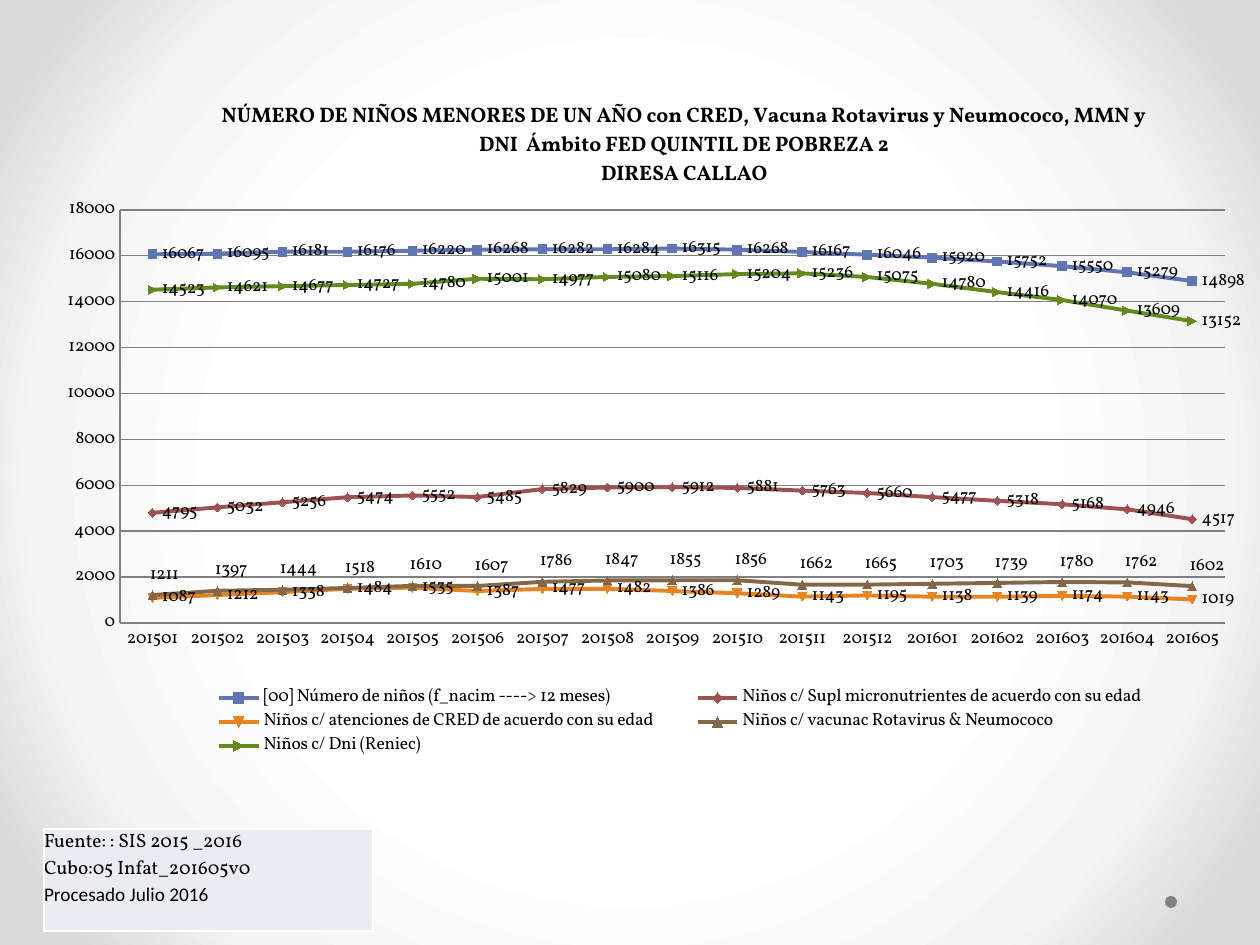
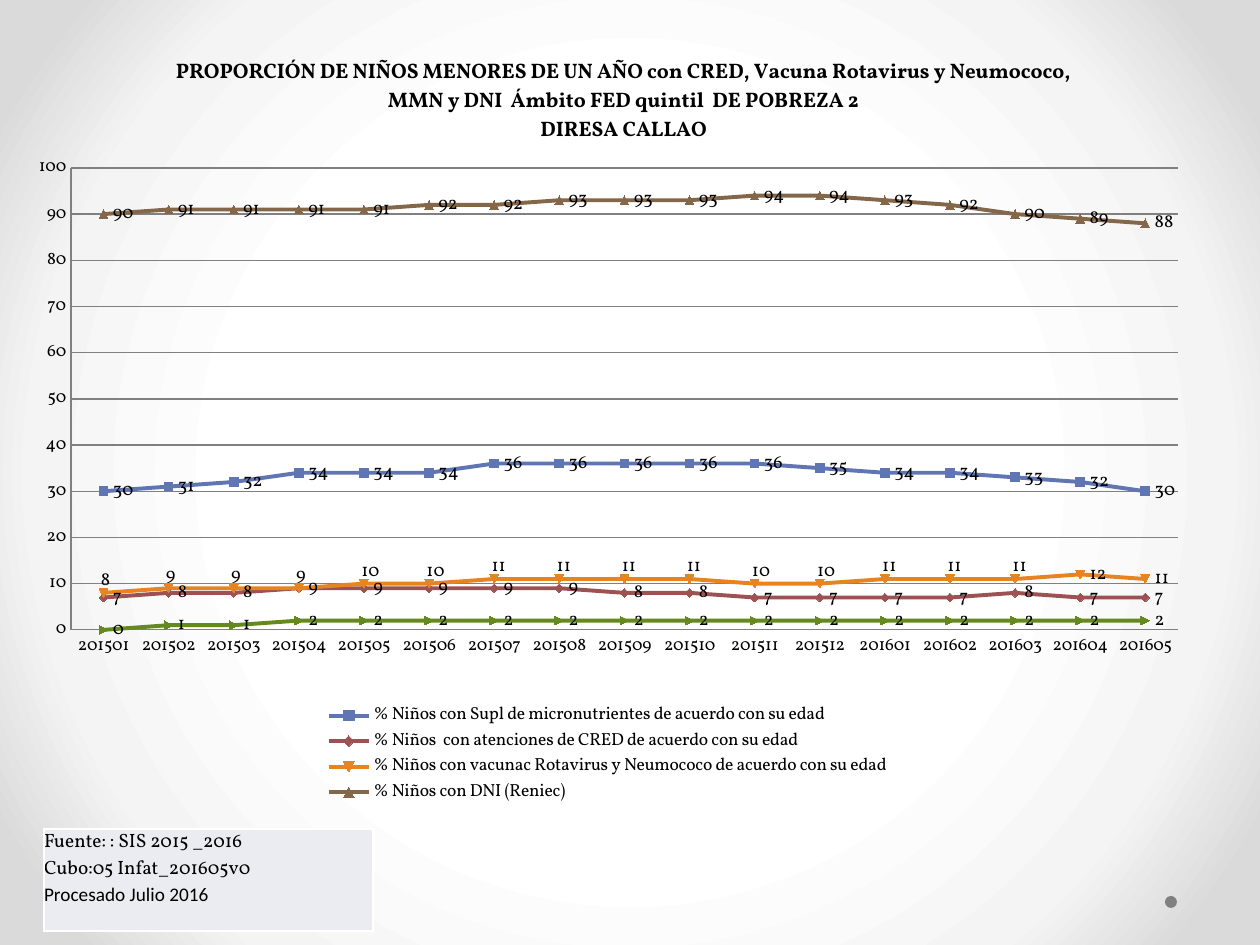
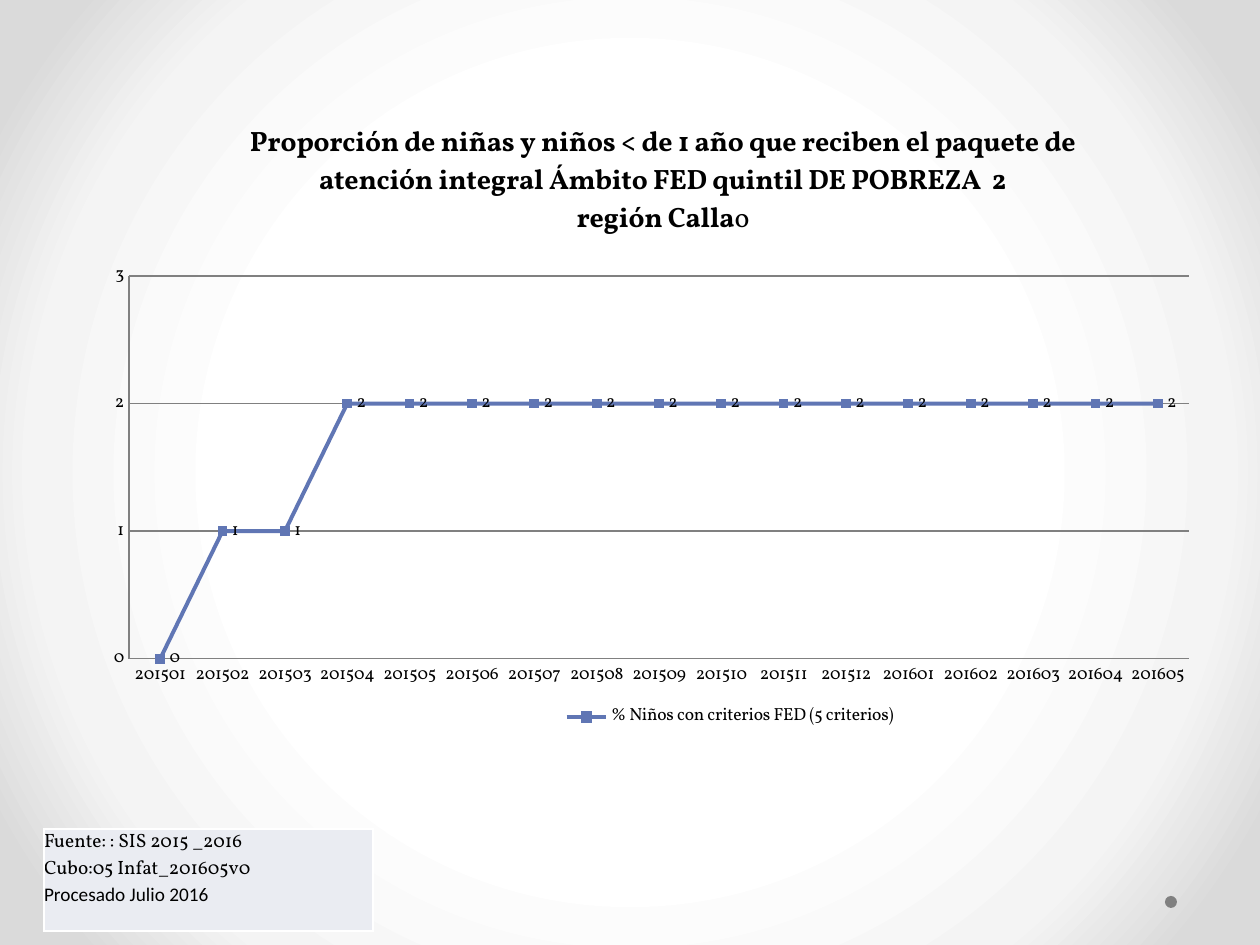
from itertools import product

from pptx import Presentation
from pptx.chart.data import CategoryChartData
from pptx.dml.color import RGBColor
from pptx.enum.chart import XL_CHART_TYPE, XL_LABEL_POSITION, XL_LEGEND_POSITION, XL_TICK_MARK
from pptx.enum.shapes import MSO_SHAPE
from pptx.enum.text import MSO_ANCHOR
from pptx.oxml import parse_xml
from pptx.oxml.ns import nsdecls, qn
from pptx.util import Emu, Pt

PX = 914400 / 126
FONT = "Vollkorn"
COLORS = {
    "text": "000000", "grid": "808080", "dot": "808080",
    "source": "EAECF2", "border": "FFFFFF",
    "blue": "6076B4", "red": "9C5252", "orange": "E68422",
    "brown": "846648", "green": "63891F",
}
SERIES_COLORS = ["blue", "red", "orange", "brown", "green"]
BACKGROUND_STOPS = [(50, "FFFFFF"), (76, "F4F4F4"), (92, "DADADA")]
SOURCE_LINES = [
    ("Fuente: : SIS 2015 _2016", FONT),
    ("Cubo:05 Infat_201605v0", FONT),
    ("Procesado Julio 2016", "Calibri"),
]
SOURCE_BOX = (44, 829, 329, 102)
DOT_BOX = (1165, 896, 12, 12)

MONTHS = [f"{year}{month:02}" for year, month in product((2015, 2016), range(1, 13))][:17]
CHILDREN = [16067, 16095, 16181, 16176, 16220, 16268, 16282, 16284, 16315,
            16268, 16167, 16046, 15920, 15752, 15550, 15279, 14898]
MICRONUTRIENTS = [4795, 5032, 5256, 5474, 5552, 5485, 5829, 5900, 5912,
                  5881, 5763, 5660, 5477, 5318, 5168, 4946, 4517]
CRED = [1087, 1212, 1338, 1484, 1535, 1387, 1477, 1482, 1386,
        1289, 1143, 1195, 1138, 1139, 1174, 1143, 1019]
VACCINES = [1211, 1397, 1444, 1518, 1610, 1607, 1786, 1847, 1855,
            1856, 1662, 1665, 1703, 1739, 1780, 1762, 1602]
DNI = [14523, 14621, 14677, 14727, 14780, 15001, 14977, 15080, 15116,
       15204, 15236, 15075, 14780, 14416, 14070, 13609, 13152]
FED_CRITERIA = ("% Niños con criterios FED (5 criterios)", [0, 1, 1] + [2] * 14)


def percent(counts):
    """Share of all children, month by month."""
    return [round(100 * count / total) for count, total in zip(counts, CHILDREN)]


# Boxes are left, top, width, height on the slide. "raised" names the series
# whose first labels move right and down: series, number of labels, shift.
SLIDES = [
    {
        "box": (64, 76, 1181, 684), "plot": (120, 210, 1105, 413),
        "legend": (180, 686, 1000, 72), "hidden_entries": [],
        "title_at": (218, 97), "title_size": 12, "label_size": 10,
        "title": [
            [("NÚMERO DE NIÑOS MENORES DE UN AÑO con CRED, Vacuna Rotavirus y Neumococo, "
              "MMN y DNI  Ámbito FED QUINTIL DE POBREZA 2", True)],
            [("DIRESA CALLAO", True)],
        ],
        "top_value": 18000, "step": 2000,
        "series": [
            ("[00] Número de niños (f_nacim ----> 12 meses)", CHILDREN),
            ("Niños c/ Supl micronutrientes de acuerdo con su edad", MICRONUTRIENTS),
            ("Niños c/ atenciones de CRED de acuerdo con su edad", CRED),
            ("Niños c/ vacunac Rotavirus & Neumococo", VACCINES),
            ("Niños c/ Dni (Reniec)", DNI),
        ],
        "raised": (3, 17, (-12, -20)),
    },
    {
        "box": (25, 26, 1191, 794), "plot": (71, 168, 1107, 462),
        "legend": (320, 702, 575, 104), "hidden_entries": [4],
        "title_at": (172, 53), "title_size": 12, "label_size": 10.5,
        "title": [
            [("PROPORCIÓN DE NIÑOS MENORES DE UN AÑO con CRED, Vacuna Rotavirus y Neumococo, "
              "MMN y DNI  Ámbito FED quintil  DE POBREZA 2", True)],
            [("DIRESA CALLAO", True)],
        ],
        "top_value": 100, "step": 10,
        "series": [
            ("% Niños con Supl de micronutrientes de acuerdo con su edad", percent(MICRONUTRIENTS)),
            ("% Niños  con atenciones de CRED de acuerdo con su edad", percent(CRED)),
            ("% Niños con vacunac Rotavirus y Neumococo de acuerdo con su edad", percent(VACCINES)),
            ("% Niños con DNI (Reniec)", percent(DNI)),
            FED_CRITERIA,
        ],
        "raised": (2, 15, (-12, -12)),
    },
    {
        "box": (89, 116, 1106, 643), "plot": (129, 276, 1060, 383),
        "legend": (560, 703, 340, 28), "hidden_entries": [],
        "title_at": (246, 119), "title_size": 16, "label_size": 10,
        "title": [
            [("Proporción de niñas y niños < de 1 año que reciben el paquete de "
              "atención integral Ámbito FED quintil DE POBREZA  2", True)],
            [("región Calla", True), ("o", False)],
        ],
        "top_value": 3, "step": 1,
        "series": [FED_CRITERIA],
        "raised": None,
    },
]


def emu(box):
    return [Emu(round(length * PX)) for length in box]


def rgb(name):
    return RGBColor.from_string(COLORS[name])


def style_font(font, size, name=FONT, bold=False):
    font.size, font.name, font.bold = Pt(size), name, bold
    font.color.rgb = rgb("text")


def style_line(line, color, width):
    line.color.rgb = rgb(color)
    line.width = Pt(width)


def set_layout(parent, index, settings):
    """Give a chart part a manual layout, as its child number index."""
    for old in parent.findall(qn("c:layout")):
        parent.remove(old)
    children = "".join(f'<c:{tag} val="{value}"/>' for tag, value in settings)
    parent.insert(index, parse_xml(
        f'<c:layout {nsdecls("c")}><c:manualLayout>{children}</c:manualLayout></c:layout>'))


def edge_layout(box, chart_box):
    """Settings that put a slide box (or just its corner) inside the chart."""
    left, top, width, height = chart_box
    origin = (left, top, 0, 0)
    extent = (width, height, width, height)
    fractions = [(tag, round((length - start) / whole, 4))
                 for tag, length, start, whole in zip("xywh", box, origin, extent)]
    return [("xMode", "edge"), ("yMode", "edge")] + fractions


def set_background(master):
    stops = "".join(f'<a:gs pos="{at * 1000}"><a:srgbClr val="{color}"/></a:gs>'
                    for at, color in BACKGROUND_STOPS)
    common = master.element.cSld
    for old in common.findall(qn("p:bg")):
        common.remove(old)
    common.insert(0, parse_xml(
        f'<p:bg {nsdecls("p", "a")}><p:bgPr><a:gradFill rotWithShape="1">'
        f'<a:gsLst>{stops}</a:gsLst><a:path path="circle">'
        '<a:fillToRect l="50000" t="50000" r="50000" b="50000"/></a:path>'
        '</a:gradFill><a:effectLst/></p:bgPr></p:bg>'))


def add_dot(slide):
    dot = slide.shapes.add_shape(MSO_SHAPE.OVAL, *emu(DOT_BOX))
    dot.shadow.inherit = False
    dot.fill.solid()
    dot.fill.fore_color.rgb = rgb("dot")
    dot.line.fill.background()


def add_paragraphs(frame, count):
    """Return count paragraphs, the first being the one already there."""
    return [frame.add_paragraph() if index else frame.paragraphs[0] for index in range(count)]


def add_run(paragraph, text, size, **style):
    run = paragraph.add_run()
    run.text = text
    style_font(run.font, size, **style)


def add_source(slide):
    table = slide.shapes.add_table(1, 1, *emu(SOURCE_BOX)).table
    table.first_row = table.horz_banding = False
    cell = table.cell(0, 0)
    cell.margin_left = cell.margin_right = cell.margin_top = cell.margin_bottom = 0
    cell.vertical_anchor = MSO_ANCHOR.TOP
    cell.fill.solid()
    cell.fill.fore_color.rgb = rgb("source")
    for index, side in enumerate("LRTB"):
        cell._tc.tcPr.insert(index, parse_xml(
            f'<a:ln{side} {nsdecls("a")} w="{Pt(1)}"><a:solidFill>'
            f'<a:srgbClr val="{COLORS["border"]}"/></a:solidFill></a:ln{side}>'))
    paragraphs = add_paragraphs(cell.text_frame, len(SOURCE_LINES))
    for paragraph, (text, name) in zip(paragraphs, SOURCE_LINES):
        add_run(paragraph, text, 11, name=name)


def add_title(chart, content):
    title = chart.chart_title
    paragraphs = add_paragraphs(title.text_frame, len(content["title"]))
    for paragraph, runs in zip(paragraphs, content["title"]):
        for text, bold in runs:
            add_run(paragraph, text, content["title_size"], bold=bold)
    set_layout(title._element, 1, edge_layout(content["title_at"], content["box"]))


def add_legend(chart, content):
    chart.has_legend = True
    legend = chart.legend
    legend.position = XL_LEGEND_POSITION.RIGHT
    legend.include_in_layout = False
    style_font(legend.font, 10)
    hidden = content["hidden_entries"]
    for index, entry in enumerate(hidden, 1):
        legend._element.insert(index, parse_xml(
            f'<c:legendEntry {nsdecls("c")}><c:idx val="{entry}"/>'
            '<c:delete val="1"/></c:legendEntry>'))
    set_layout(legend._element, 1 + len(hidden),
               edge_layout(content["legend"], content["box"]))


def style_axes(chart, content):
    for axis in (chart.category_axis, chart.value_axis):
        axis.major_tick_mark = axis.minor_tick_mark = XL_TICK_MARK.NONE
        style_line(axis.format.line, "grid", 0.75)
        style_font(axis.tick_labels.font, 10)
    values = chart.value_axis
    values.minimum_scale, values.maximum_scale = 0, content["top_value"]
    values.major_unit = content["step"]
    values.tick_labels.number_format = "0"
    values.tick_labels.number_format_is_linked = False
    values.has_major_gridlines = True
    style_line(values.major_gridlines.format.line, "grid", 0.75)


def style_series(series, color, label_size):
    series.smooth = False
    style_line(series.format.line, color, 2.25)
    series.marker.format.fill.solid()
    series.marker.format.fill.fore_color.rgb = rgb(color)
    style_line(series.marker.format.line, color, 0.75)
    labels = series.data_labels
    labels.show_value = True
    labels.position = XL_LABEL_POSITION.RIGHT
    style_font(labels.font, label_size)


def raise_labels(series, count, shift, label_size, chart_box):
    for index in range(count):
        label = series.points[index].data_label
        label.position = XL_LABEL_POSITION.RIGHT
        style_font(label.font, label_size)
    fractions = [(tag, round(length / whole, 4))
                 for tag, length, whole in zip("xy", shift, chart_box[2:])]
    for label in series._element.iter(qn("c:dLbl")):
        set_layout(label, 1, fractions)


def add_line_chart(slide, content):
    data = CategoryChartData(number_format="General")
    data.categories = MONTHS
    for name, values in content["series"]:
        data.add_series(name, values)
    box, label_size = content["box"], content["label_size"]
    chart = slide.shapes.add_chart(XL_CHART_TYPE.LINE_MARKERS, *emu(box), data).chart
    style_font(chart.font, 10)
    add_title(chart, content)
    add_legend(chart, content)
    style_axes(chart, content)
    plot = chart.plots[0]
    plot.vary_by_categories = False
    for series, color in zip(plot.series, SERIES_COLORS):
        style_series(series, color, label_size)
    if content["raised"]:
        position, count, shift = content["raised"]
        raise_labels(plot.series[position], count, shift, label_size, box)
    set_layout(chart._chartSpace.chart.plotArea, 0,
               [("layoutTarget", "inner")] + edge_layout(content["plot"], box))


def main():
    prs = Presentation()
    prs.slide_width, prs.slide_height = emu((1260, 945))
    set_background(prs.slide_master)
    for content in SLIDES:
        slide = prs.slides.add_slide(prs.slide_layouts[6])
        add_dot(slide)
        add_line_chart(slide, content)
        add_source(slide)
    prs.save("out.pptx")


if __name__ == "__main__":
    main()
